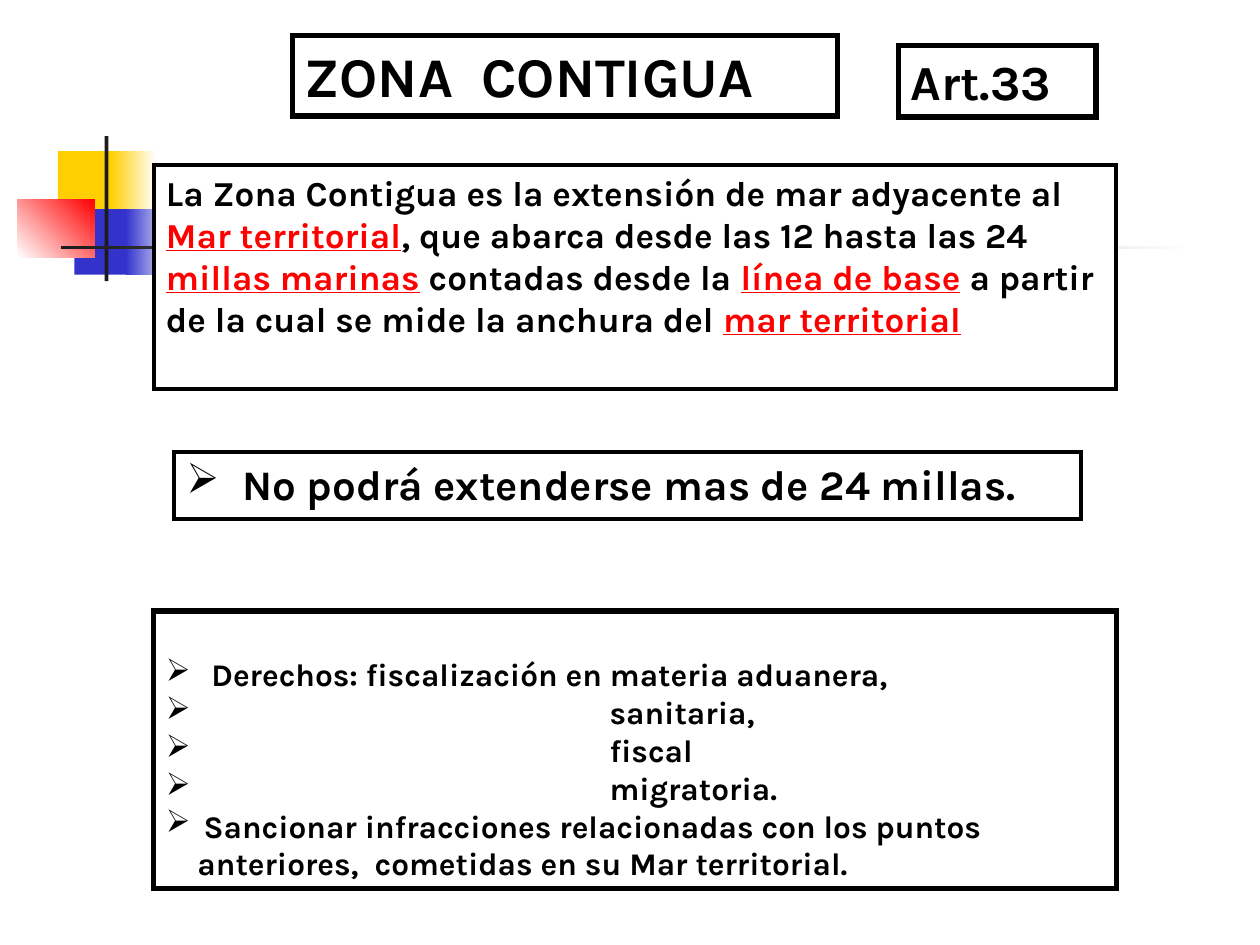
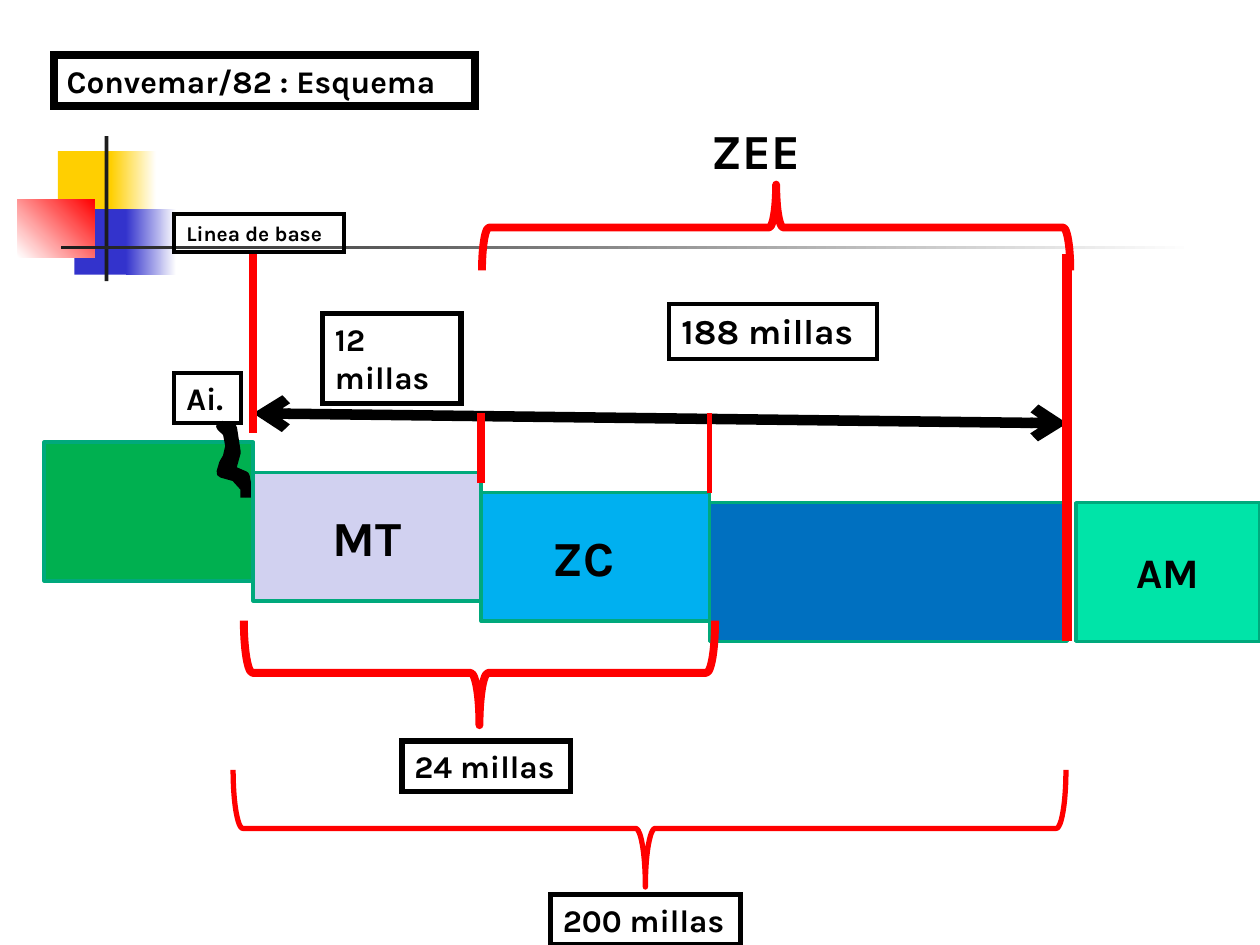
from dataclasses import dataclass

from lxml import etree
from pptx import Presentation
from pptx.dml.color import RGBColor
from pptx.enum.shapes import MSO_CONNECTOR, MSO_SHAPE
from pptx.enum.text import MSO_ANCHOR, PP_ALIGN
from pptx.oxml.ns import qn
from pptx.util import Pt

RECTANGLE = MSO_SHAPE.RECTANGLE
LEFT_BRACE, RIGHT_BRACE = MSO_SHAPE.LEFT_BRACE, MSO_SHAPE.RIGHT_BRACE
STRAIGHT = MSO_CONNECTOR.STRAIGHT
MIDDLE, CENTER = MSO_ANCHOR.MIDDLE, PP_ALIGN.CENTER


@dataclass(frozen=True)
class Theme:
    font: str = "Karla"
    black: str = "000000"
    white: str = "FFFFFF"
    red: str = "FF0000"
    yellow: str = "FFCF01"
    blue: str = "3333CC"
    charcoal: str = "1C1C1C"
    zone_edge: str = "00A97C"
    land: str = "00B050"
    territorial: str = "D1D1F0"
    contiguous: str = "00B0F0"
    economic: str = "0070C0"
    high_seas: str = "00E4A8"
    title: int = 32
    heading: int = 28
    subheading: int = 24
    body: int = 20
    detail: int = 18
    caption: int = 12


THEME = Theme()
SLIDE_SIZE = (720, 540)
BULLET = "➢"

# Frames are (left, top, width, height) in points.
# Motif parts: frame, colours (two make a gradient), gradient angle
MOTIF = [
    ((33.1, 86.4, 34.6, 37.4), [THEME.yellow], 0),
    ((63.4, 86.4, 25.9, 37.4), [THEME.yellow, THEME.white], 0),
    ((42.5, 119.5, 33.1, 37.4), [THEME.blue], 0),
    ((72, 119.5, 28.8, 37.4), [THEME.blue, THEME.white], 0),
    ((10.1, 113.8, 43.9, 33.1), [THEME.white, THEME.red], 45),
    ((59.8, 77.8, 2.2, 82.8), [THEME.charcoal], 0),
    ((34.6, 140.4, 648, 2.2), [THEME.charcoal, THEME.white], 0),
]

# Boxes: text, frame, type size, outline width (0 for none)
CONTIGUOUS_HEADINGS = [
    ("ZONA  CONTIGUA", (167, 20.2, 311.8, 46.1), THEME.title, 3),
    ("Art.33", (513.4, 25.9, 113, 41), THEME.heading, 3),
]
DEFINITION_FRAME = (87.8, 94.3, 550.1, 128.2)
DEFINITION = [  # text, highlighted
    ("La Zona Contigua es la extensión de mar adyacente al ", False),
    ("Mar territorial", True),
    (", que abarca desde las 12 hasta las 24 ", False),
    ("millas marinas", True),
    (" contadas desde la ", False),
    ("línea de base", True),
    (" a partir de la cual se mide la anchura del ", False),
    ("mar territorial", True),
]
LIMIT_FRAME = (99.4, 258.5, 518.4, 38.2)
LIMIT = [("No podrá extenderse mas de 24 millas.", 32, True)]
RIGHTS_FRAME = (87.8, 349.2, 550.1, 158.4)
RIGHTS_TOP_MARGIN = 25.3
SUBJECT_INDENT = 253.5
RIGHTS = [  # text, indent, bulleted
    ("Derechos: fiscalización en materia aduanera,", 26, True),
    ("sanitaria,", SUBJECT_INDENT, True),
    ("fiscal", SUBJECT_INDENT, True),
    ("migratoria.", SUBJECT_INDENT, True),
    ("Sancionar infracciones relacionadas con los puntos", 21.5, True),
    ("anteriores,  cometidas en su Mar territorial.", 18, False),
]

# Sea limits, as horizontal positions
COAST, BASELINE, LIMIT_12, LIMIT_24, LIMIT_200 = 25.2, 144.7, 275, 405.4, 609.8
HIGH_SEAS_START = 614.9
ZONES = [  # label, left, right, top, height, fill, type size
    ("", COAST, BASELINE, 252.7, 79.2, THEME.land, THEME.heading),
    ("MT", BASELINE, LIMIT_12, 270, 73.4, THEME.territorial, THEME.heading),
    ("", LIMIT_12, LIMIT_24, 281.5, 73.4, THEME.contiguous, THEME.heading),
    ("", LIMIT_24, LIMIT_200, 287.3, 79.2, THEME.economic, THEME.heading),
    ("AM", HIGH_SEAS_START, 720, 287.3, 79.2, THEME.high_seas, THEME.subheading),
]
DISTANCE_ARROW = ((BASELINE, 236.2), (LIMIT_200, 241.9))
LIMIT_LINES = [  # position, top, bottom, width
    (LIMIT_12, 236.2, 275.8, 4.5),
    (LIMIT_24, 236.2, 281.5, 3),
    (LIMIT_200, 145.4, 366.5, 6),
    (BASELINE, 145.4, 247.7, 4.5),
]
BRACES = [  # preset before the quarter turn, frame as seen, width, point position
    (RIGHT_BRACE, (139.3, 354.6, 269.3, 59.8), 4.5, 0.5),
    (LEFT_BRACE, (275.4, 105.5, 336.2, 49), 4.5, 0.5),
    (RIGHT_BRACE, (133.2, 439.9, 475.9, 67), 3, 0.505),
]
SCHEME_LABELS = [
    ("Convemar/82 : Esquema", (31, 31.7, 240.5, 28.8), THEME.detail, 4.5),
    ("Linea de base", (99.4, 122.4, 97.2, 21.6), THEME.caption, 2.25),
    ("Ai.", (99.4, 213.1, 38.2, 28.8), THEME.detail, 2.25),
    ("12 millas", (184.3, 179.3, 79.2, 51.1), THEME.detail, 3),
    ("188 millas", (382.3, 173.5, 118.8, 31.7), THEME.body, 2.25),
    ("24 millas", (229.7, 423.4, 96.5, 28.8), THEME.detail, 3),
    ("200 millas", (314.6, 511.2, 108.7, 28.8), THEME.detail, 3),
    ("ZC", (308.9, 298.1, 79.2, 41), THEME.heading, 0),
    ("ZEE", (399.6, 65.5, 85, 41), THEME.heading, 0),
]
INLAND_WATERS_MARK = [
    (140.4, 278.6), (134.6, 272.2), (126.7, 270), (128.2, 265), (130.3, 261.4),
    (131.8, 254.9), (130.3, 247), (126.5, 243.5), (132.5, 244.8), (134.6, 258.5),
    (131.8, 268.6), (134.6, 270), (139.7, 272.2), (140.4, 275.8), (140.4, 284.4),
]


def color(value):
    return RGBColor.from_string(value)


def points(values):
    return [Pt(value) for value in values]


def paint(shape, fill=None, line=None, width=0):
    shape.shadow.inherit = False
    if fill:
        shape.fill.solid()
        shape.fill.fore_color.rgb = color(fill)
    else:
        shape.fill.background()
    if line:
        shape.line.color.rgb = color(line)
        shape.line.width = Pt(width)
    else:
        shape.line.fill.background()


def set_font(font, size, text_color=THEME.black):
    font.name, font.size, font.bold = THEME.font, Pt(size), True
    font.color.rgb = color(text_color)


def add_box(slide, frame, width, fill=None):
    """Add a text box with a sharp-cornered black outline and return it."""
    box = slide.shapes.add_textbox(*points(frame))
    paint(box, fill, THEME.black if width else None, width)
    if width:
        etree.SubElement(box.line._get_or_add_ln(), qn("a:miter"), lim="800000")
    box.text_frame.word_wrap = True
    return box


def add_label(slide, text, frame, size, width):
    paragraph = add_box(slide, frame, width).text_frame.paragraphs[0]
    paragraph.text = text
    set_font(paragraph.font, size)


def add_list(slide, frame, items, size, width, top_margin=3.6):
    text_frame = add_box(slide, frame, width).text_frame
    text_frame.margin_top = Pt(top_margin)
    for index, (text, indent, bulleted) in enumerate(items):
        paragraph = text_frame.add_paragraph() if index else text_frame.paragraphs[0]
        paragraph.text = text
        set_font(paragraph.font, size)
        properties = paragraph._p.get_or_add_pPr()
        properties.set("marL", str(Pt(indent)))
        if bulleted:
            properties.set("indent", str(-Pt(indent)))
            bullet = etree.Element(qn("a:buChar"), char=BULLET)
            properties.insert(0, bullet)


def add_line(slide, start, end, line_color, width, arrows=False):
    line = slide.shapes.add_connector(STRAIGHT, *points(start + end))
    line.line.color.rgb = color(line_color)
    line.line.width = Pt(width)
    if arrows:
        for end_name in ("a:headEnd", "a:tailEnd"):
            etree.SubElement(line.line._get_or_add_ln(), qn(end_name), type="arrow")
    etree.SubElement(line._element.spPr, qn("a:effectLst"))


def add_brace(slide, preset, frame, width, point):
    """Add a brace turned by 90 degrees that fills the frame as seen."""
    left, top, span, depth = frame
    shift = (span - depth) / 2
    brace = slide.shapes.add_shape(
        preset, *points((left + shift, top - shift, depth, span)))
    brace.rotation = 90
    brace.adjustments[1] = point
    paint(brace, None, THEME.red, width)


def add_zone(slide, label, left, right, top, height, fill, size):
    zone = slide.shapes.add_shape(RECTANGLE, *points((left, top, right - left, height)))
    paint(zone, fill, THEME.zone_edge, 2)
    if label:
        zone.text_frame.vertical_anchor = MIDDLE
        paragraph = zone.text_frame.paragraphs[0]
        paragraph.text, paragraph.alignment = label, CENTER
        set_font(paragraph.font, size)


def add_slide(presentation):
    """Add a blank slide that carries the shared motif."""
    slide = presentation.slides.add_slide(presentation.slide_layouts[6])
    for frame, colors, angle in MOTIF:
        part = slide.shapes.add_shape(RECTANGLE, *points(frame))
        paint(part, colors[0])
        if len(colors) > 1:
            part.fill.gradient()
            part.fill.gradient_angle = angle
            for stop, value in zip(part.fill.gradient_stops, colors):
                stop.color.rgb = color(value)
    return slide


def build_contiguous_zone(presentation):
    slide = add_slide(presentation)
    for heading in CONTIGUOUS_HEADINGS:
        add_label(slide, *heading)
    definition = add_box(slide, DEFINITION_FRAME, 2.25, THEME.white)
    paragraph = definition.text_frame.paragraphs[0]
    for text, highlighted in DEFINITION:
        run = paragraph.add_run()
        run.text = text
        set_font(run.font, THEME.body, THEME.red if highlighted else THEME.black)
        run.font.underline = highlighted
    add_list(slide, LIMIT_FRAME, LIMIT, THEME.subheading, 2.25)
    add_list(slide, RIGHTS_FRAME, RIGHTS, THEME.detail, 3, RIGHTS_TOP_MARGIN)


def build_scheme(presentation):
    slide = add_slide(presentation)
    for zone in ZONES:
        add_zone(slide, *zone)
    add_line(slide, *DISTANCE_ARROW, THEME.black, 6, arrows=True)
    for position, top, bottom, width in LIMIT_LINES:
        add_line(slide, (position, top), (position, bottom), THEME.red, width)
    for brace in BRACES:
        add_brace(slide, *brace)
    start, *rest = [points(vertex) for vertex in INLAND_WATERS_MARK]
    builder = slide.shapes.build_freeform(*start)
    builder.add_line_segments(rest, close=False)
    paint(builder.convert_to_shape(), THEME.black, THEME.black, 6)
    for label in SCHEME_LABELS:
        add_label(slide, *label)


def main():
    presentation = Presentation()
    presentation.slide_width, presentation.slide_height = points(SLIDE_SIZE)
    build_contiguous_zone(presentation)
    build_scheme(presentation)
    presentation.save("out.pptx")


if __name__ == "__main__":
    main()
